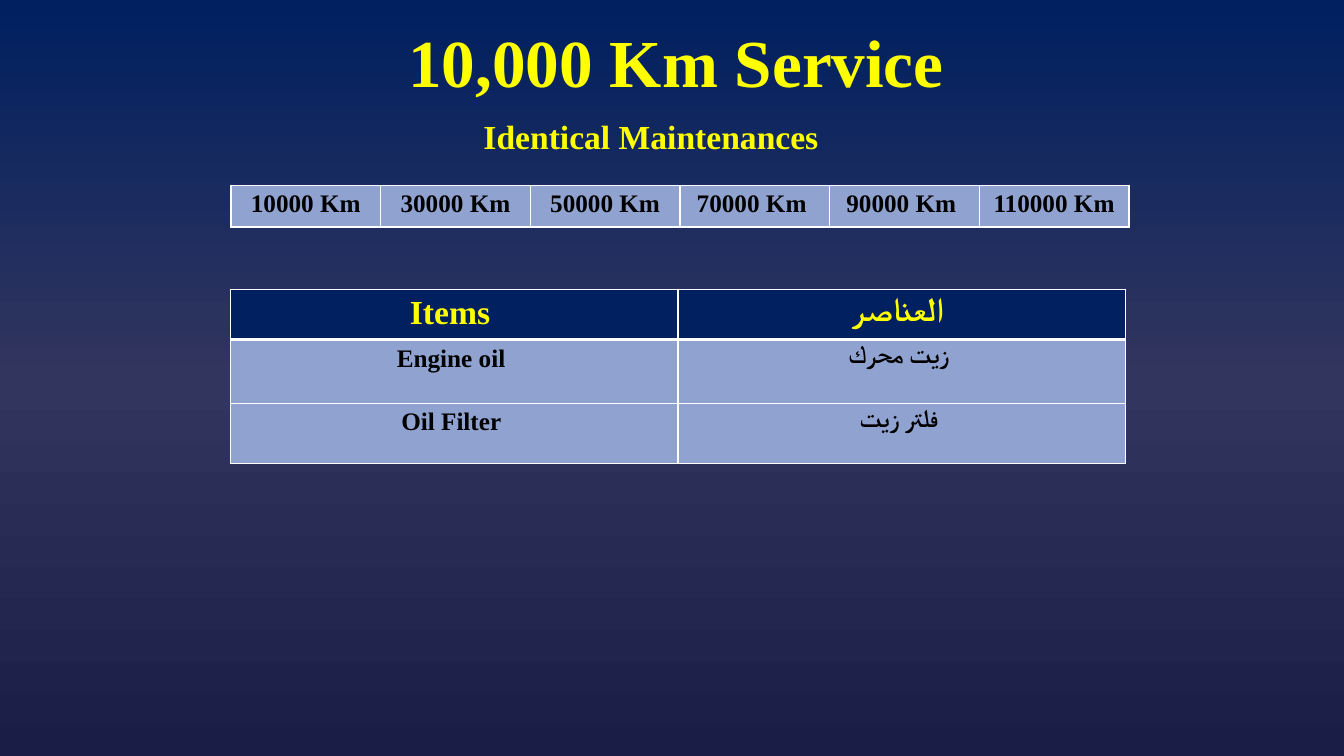
import pptx
import pptx.util
import pptx.dml.color
import pptx.enum.text
import pptx.oxml
import pptx.oxml.ns

Pt = pptx.util.Pt
YELLOW, BLACK, WHITE = "FFFF00", "000000", "FFFFFF"
NAVY, PERIWINKLE = "002060", "90A2CF"
LATIN, ARABIC = "Times New Roman", "Calibri"
NAMESPACE = pptx.oxml.ns.nsdecls("a")


def write(frame, text, size, color, font=LATIN):
    """Put one centred bold run into a text frame."""
    para = frame.paragraphs[0]
    para.alignment = pptx.enum.text.PP_ALIGN.CENTER
    span = para.add_run()
    span.text = text
    span.font.size = Pt(size)
    span.font.bold = True
    span.font.name = font
    span.font.color.rgb = pptx.dml.color.RGBColor.from_string(color)
    if font == ARABIC:
        span.font._element.append(
            pptx.oxml.parse_xml(f'<a:cs {NAMESPACE} typeface="{font}"/>'))


def style_cell(cell, color, bottom=1):
    """Fill a cell and give it white borders."""
    cell.fill.solid()
    cell.fill.fore_color.rgb = pptx.dml.color.RGBColor.from_string(color)
    properties = cell._tc.get_or_add_tcPr()
    widths = {"lnL": 1, "lnR": 1, "lnT": 1, "lnB": bottom}
    for place, (side, width) in enumerate(widths.items()):
        properties.insert(place, pptx.oxml.parse_xml(
            f'<a:{side} {NAMESPACE} w="{Pt(width)}"><a:solidFill>'
            f'<a:srgbClr val="{WHITE}"/></a:solidFill></a:{side}>'))


deck = pptx.Presentation()
deck.slide_width, deck.slide_height = Pt(960), Pt(540)
page = deck.slides.add_slide(deck.slide_layouts[6])

# Background: three-stop vertical gradient
page.background.fill.gradient()
page.background.fill.gradient_angle = 270
stops = page.background.fill._fill._gradFill.gsLst
for stop in list(stops):
    stops.remove(stop)
for percent, color in [(0, NAVY), (50, "32355E"), (100, "1A1E47")]:
    stops.append(pptx.oxml.parse_xml(
        f'<a:gs {NAMESPACE} pos="{percent * 1000}"><a:srgbClr val="{color}"/></a:gs>'))

# Title and subtitle
for text, size, left, top, width, height in [
        ("10,000 Km Service", 48, 69, 7, 828, 72),
        ("Identical Maintenances ", 24, 271.5, 79.5, 393, 36)]:
    box = page.shapes.add_textbox(Pt(left), Pt(top), Pt(width), Pt(height))
    box.text_frame.word_wrap = True
    box.text_frame.vertical_anchor = pptx.enum.text.MSO_ANCHOR.MIDDLE
    write(box.text_frame, text, size, YELLOW)

# Service intervals
intervals = ["10000 Km", "30000 Km", "50000 Km", "70000 Km ", "90000 Km ", "110000 Km"]
interval_table = page.shapes.add_table(
    1, len(intervals), Pt(165), Pt(132.3), Pt(641.4), Pt(29.8)).table
for cell, text in zip(interval_table.rows[0].cells, intervals):
    style_cell(cell, PERIWINKLE)
    write(cell.text_frame, text, 18, BLACK)

# Service items in English and Arabic
items = [("Items ", "العناصر "), ("Engine oil ", "زيت محرك "), ("Oil Filter ", "فلتر زيت ")]
row_heights = [36, 45.6, 43.2]
item_table = page.shapes.add_table(
    len(items), 2, Pt(164.6), Pt(206.5), Pt(639.4), Pt(sum(row_heights))).table
for index, (texts, height) in enumerate(zip(items, row_heights)):
    row = item_table.rows[index]
    row.height = Pt(height)
    is_header = index == 0
    for cell, text, font in zip(row.cells, texts, (LATIN, ARABIC)):
        style_cell(cell, NAVY if is_header else PERIWINKLE, 3 if is_header else 1)
        write(cell.text_frame, text, 24 if is_header else 18,
              YELLOW if is_header else BLACK, font)
        if font == ARABIC:
            cell.margin_top = cell.margin_bottom = 0

deck.save("out.pptx")
